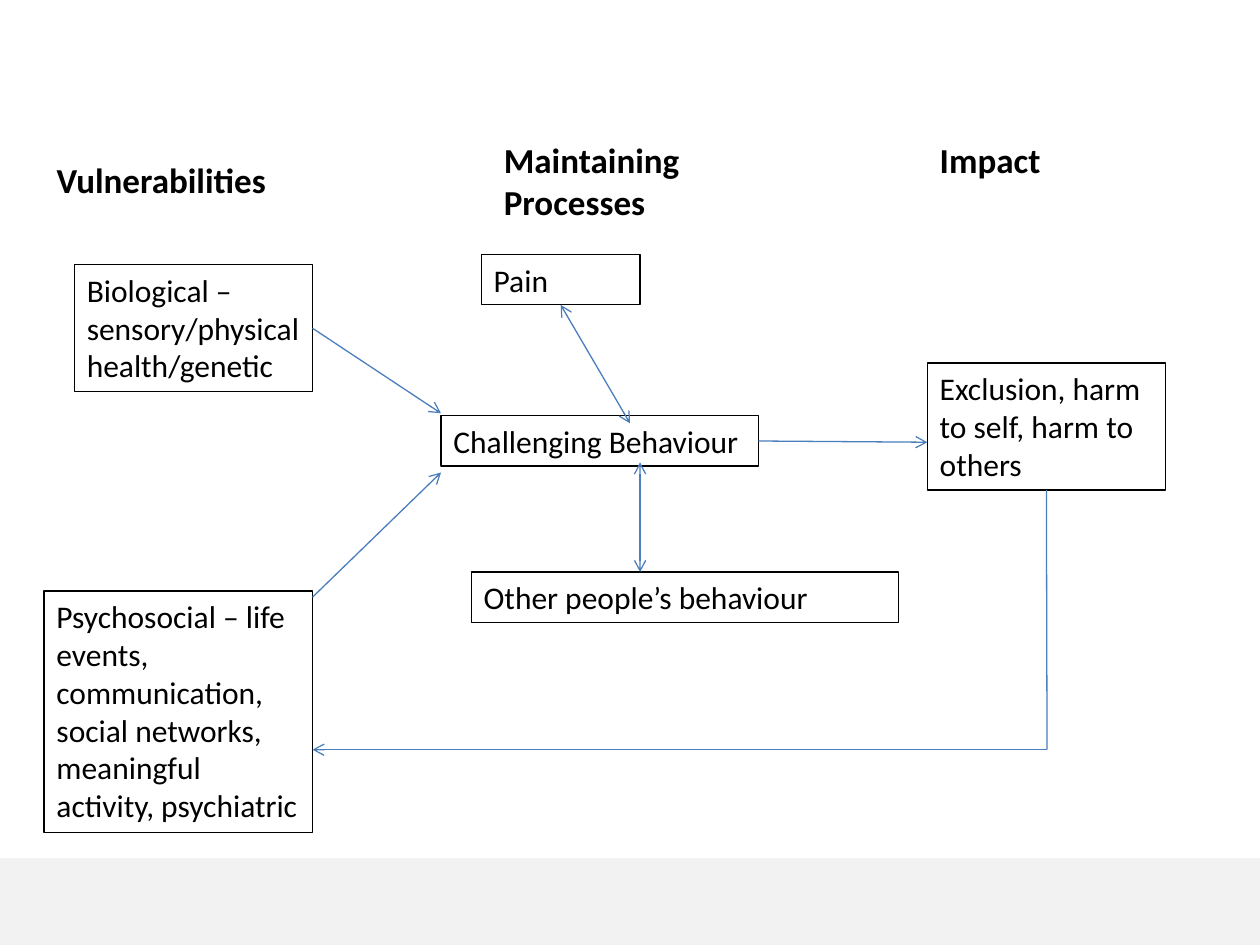
from lxml.etree import SubElement
from pptx import Presentation
from pptx.dml.color import RGBColor
from pptx.enum.shapes import MSO_CONNECTOR, MSO_SHAPE
from pptx.enum.text import MSO_ANCHOR, MSO_AUTO_SIZE, PP_ALIGN
from pptx.oxml.ns import qn
from pptx.util import Inches, Pt

COLS, ROWS = 100, 75
BOTTOM, RIGHT = 2, 3


def rgb(value):
    return RGBColor.from_string(value)


class Diagram:
    font = "Calibri"
    ink, arrow_ink, band_fill = "000000", "4B7EBC", "F2F2F2"
    line_width = Pt(0.75)

    def __init__(self, prs):
        self.s = prs.slides.add_slide(prs.slide_layouts[6])
        self.col = prs.slide_width / COLS
        self.row = prs.slide_height / ROWS

    def place(self, *lengths):
        """Turn alternating columns and rows into slide units."""
        return [round(n * (self.row if i % 2 else self.col))
                for i, n in enumerate(lengths)]

    def set_text(self, sp, text, **style):
        tf = sp.text_frame
        frame = dict(word_wrap=True, vertical_anchor=MSO_ANCHOR.TOP,
                     auto_size=MSO_AUTO_SIZE.SHAPE_TO_FIT_TEXT)
        for name, value in frame.items():
            setattr(tf, name, value)
        p = tf.paragraphs[0]
        p.alignment = PP_ALIGN.LEFT
        r = p.add_run()
        r.text = text
        for name, value in dict(name=self.font, **style).items():
            setattr(r.font, name, value)
        r.font.color.rgb = rgb(self.ink)

    def rectangle(self, *at):
        sp = self.s.shapes.add_shape(MSO_SHAPE.RECTANGLE, *self.place(*at))
        sp.shadow.inherit = False
        return sp

    def band(self, *at):
        sp = self.rectangle(*at)
        sp.fill.solid()
        sp.fill.fore_color.rgb = rgb(self.band_fill)
        sp.line.fill.background()

    def box(self, text, *at):
        sp = self.rectangle(*at)
        sp.fill.background()
        sp.line.color.rgb = rgb(self.ink)
        sp.line.width = self.line_width
        self.set_text(sp, text, size=Pt(18))
        return sp

    def heading(self, text, *at):
        sp = self.s.shapes.add_textbox(*self.place(*at))
        self.set_text(sp, text, size=Pt(20), bold=True)

    def link(self, start, end, ends=("tailEnd",), start_at=None, end_at=None):
        """Draw a line; start_at and end_at are (box, side) pairs to join."""
        c = self.s.shapes.add_connector(
            MSO_CONNECTOR.STRAIGHT, *self.place(*start, *end))
        if start_at:
            c.begin_connect(*start_at)
        if end_at:
            c.end_connect(*end_at)
        c.line.color.rgb = rgb(self.arrow_ink)
        c.line.width = self.line_width
        ln = c._element.spPr.find(qn("a:ln"))
        for tag in ends:
            SubElement(ln, qn(f"a:{tag}"), type="arrow")
        SubElement(c._element.spPr, qn("a:effectLst"))


def main():
    prs = Presentation()
    prs.slide_width, prs.slide_height = Inches(10), Inches(7.5)
    d = Diagram(prs)
    d.band(0, 68.1, COLS, ROWS - 68.1)

    d.heading("Vulnerabilities", 3.5, 12.1, 22.8, 4.4)
    d.heading("Maintaining Processes", 39, 10.5, 18.9, 7.7)
    d.heading("Impact", 73.6, 10.5, 18.9, 4.4)

    behaviour = d.box("Challenging Behaviour", 35, 33, 25.2, 4)
    exclusion = d.box("Exclusion, harm to self, harm to others",
                      73.6, 28.8, 18.9, 10.1)
    pain = d.box("Pain", 38.2, 20.2, 12.6, 4)
    d.box("Other people’s behaviour", 37.4, 45.4, 33.9, 4)
    biological = d.box("Biological – sensory/physical health/genetic",
                       5.9, 21, 18.9, 10.1)
    d.box("Psychosocial – life events, communication, social networks, "
          "meaningful activity, psychiatric", 3.5, 46.9, 21.3, 19.2)

    both = ("headEnd", "tailEnd")
    d.link((24.8, 26), (35, 32.8), start_at=(biological, RIGHT))
    d.link((24.8, 47.4), (35, 37.5))
    d.link((60.2, 35), (73.6, 35.1), start_at=(behaviour, RIGHT))
    d.link((50.8, 45.4), (50.8, 36.7), both)
    d.link((50, 33.6), (44.5, 24.2), both, end_at=(pain, BOTTOM))
    d.link((83.1, 59.5), (24.8, 59.5))
    d.link((83.1, 38.9), (83.1, 59.5), (), start_at=(exclusion, BOTTOM))

    prs.save("out.pptx")


if __name__ == "__main__":
    main()
